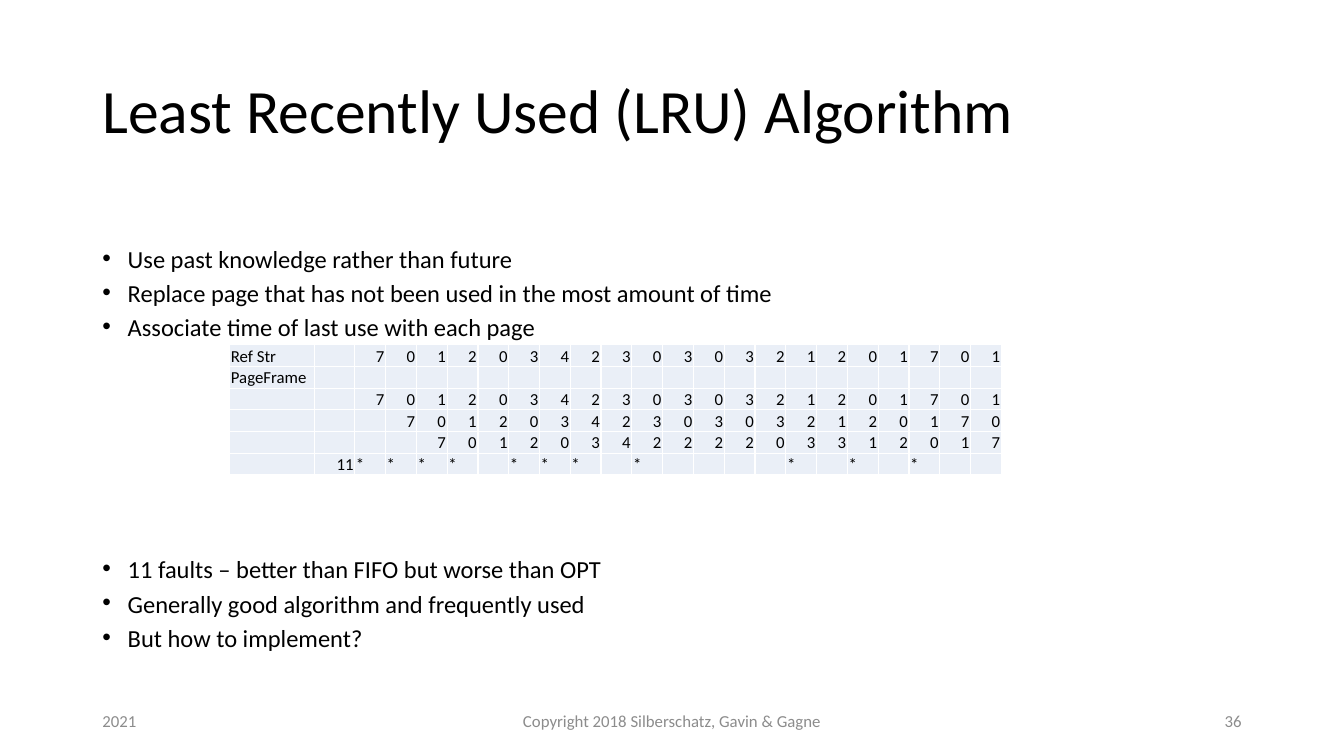
from lxml import etree
from pptx import Presentation
from pptx.dml.color import RGBColor
from pptx.enum.text import MSO_ANCHOR, PP_ALIGN
from pptx.oxml.ns import qn
from pptx.util import Cm, Pt

LEFT, CENTER, RIGHT = PP_ALIGN.LEFT, PP_ALIGN.CENTER, PP_ALIGN.RIGHT
TOP, MIDDLE, BOTTOM = MSO_ANCHOR.TOP, MSO_ANCHOR.MIDDLE, MSO_ANCHOR.BOTTOM

TITLE = "Least Recently Used (LRU) Algorithm"
IDEAS = [
    "Use past knowledge rather than future",
    "Replace page that has not been used in the most amount of time",
    "Associate time of last use with each page",
]
RESULTS = [
    "11 faults – better than FIFO but worse than OPT",
    "Generally good algorithm and frequently used",
    "But how to implement?",
]
FOOTERS = [
    ("2021", 2.33, 7.62, LEFT),
    ("Copyright 2018 Silberschatz, Gavin & Gagne", 11.22, 11.43, CENTER),
    ("36", 23.92, 7.62, RIGHT),
]
REFERENCES = "701203423030321201701"
FRAMES = [REFERENCES, REFERENCES[:-1], "7012034222203312017"]
FAULTS = "****.***.*....*.*.*.."

STEPS = len(REFERENCES)
ROWS = [
    ["Ref Str", "", *REFERENCES],
    ["PageFrame", ""] + [""] * STEPS,
    *[["", "", *frame.rjust(STEPS).replace(" ", ".")] for frame in FRAMES],
    ["", str(FAULTS.count("*")), *FAULTS],
]

FONT = "Calibri"
BLACK, GRAY, WHITE, PALE_BLUE = "000000", "8C8C8C", "FFFFFF", "EAEFF7"
MARGIN, CONTENT_WIDTH = 2.33, 29.21
TABLE_LEFT, TABLE_TOP, TABLE_WIDTH, TABLE_HEIGHT = 5.79, 8.69, 19.46, 3.28
LABEL_WIDTH, COUNT_WIDTH = 2.13, 1.02
STEP_WIDTH = (TABLE_WIDTH - LABEL_WIDTH - COUNT_WIDTH) / STEPS


def color(value):
    return RGBColor.from_string(value)


def add_bullet(para):
    properties = para._p.get_or_add_pPr()
    properties.set("marL", str(Cm(0.64)))
    properties.set("indent", str(-Cm(0.64)))
    font = etree.SubElement(properties, qn("a:buFont"))
    font.set("typeface", "Arial")
    etree.SubElement(properties, qn("a:buChar")).set("char", "•")


def write(frame, lines, size, ink=BLACK, align=LEFT, anchor=TOP,
          line_spacing=1.0, gap=0, bullet=False):
    frame.word_wrap = True
    frame.vertical_anchor = anchor
    for index, line in enumerate(lines):
        para = frame.add_paragraph() if index else frame.paragraphs[0]
        para.alignment = align
        para.line_spacing = line_spacing
        para.space_before = Pt(gap if index else 0)
        if bullet:
            add_bullet(para)
        span = para.add_run()
        span.text = line
        span.font.name = FONT
        span.font.size = Pt(size)
        span.font.color.rgb = color(ink)


def add_text(page, left, top, width, height, lines, size, **style):
    box = page.shapes.add_textbox(Cm(left), Cm(top), Cm(width), Cm(height))
    write(box.text_frame, lines, size, **style)


def add_borders(cell):
    properties = cell._tc.get_or_add_tcPr()
    for index, side in enumerate(("a:lnL", "a:lnR", "a:lnT", "a:lnB")):
        line = etree.Element(qn(side), w=str(Pt(1)))
        fill = etree.SubElement(line, qn("a:solidFill"))
        etree.SubElement(fill, qn("a:srgbClr")).set("val", WHITE)
        properties.insert(index, line)


def fill_cell(cell, text):
    cell.margin_left = cell.margin_right = cell.margin_top = Cm(0.03)
    cell.margin_bottom = 0
    cell.fill.solid()
    cell.fill.fore_color.rgb = color(PALE_BLUE)
    add_borders(cell)
    cell.vertical_anchor = MIDDLE if text == "11" else BOTTOM
    if text in ("", "."):
        ending = etree.SubElement(cell.text_frame.paragraphs[0]._p, qn("a:endParaRPr"))
        ending.set("sz", "1200")
        return
    write(cell.text_frame, [text], 12, align=RIGHT if text.isdigit() else LEFT,
          anchor=cell.vertical_anchor)


def add_page_table(page):
    shape = page.shapes.add_table(len(ROWS), len(ROWS[0]), Cm(TABLE_LEFT), Cm(TABLE_TOP),
                                  Cm(TABLE_WIDTH), Cm(TABLE_HEIGHT))
    table = shape.table
    table.first_row = table.horz_banding = False
    widths = [LABEL_WIDTH, COUNT_WIDTH] + [STEP_WIDTH] * STEPS
    for column, width in zip(table.columns, widths):
        column.width = Cm(width)
    for row_index, row in enumerate(ROWS):
        table.rows[row_index].height = Cm(TABLE_HEIGHT / len(ROWS))
        for column_index, text in enumerate(row):
            fill_cell(table.cell(row_index, column_index), text)


def main():
    deck = Presentation()
    deck.slide_width, deck.slide_height = Cm(33.87), Cm(19.05)
    page = deck.slides.add_slide(deck.slide_layouts[6])
    add_text(page, MARGIN, 1.02, CONTENT_WIDTH, 3.68, [TITLE], 44,
             anchor=MIDDLE, line_spacing=0.9)
    for top, lines in ((6.22, IDEAS), (14.05, RESULTS)):
        add_text(page, MARGIN, top, CONTENT_WIDTH, 2.5, lines, 17.5,
                 line_spacing=0.7, gap=9.7, bullet=True)
    for text, left, width, align in FOOTERS:
        add_text(page, left, 17.65, width, 1.02, [text], 12,
                 ink=GRAY, align=align, anchor=MIDDLE)
    add_page_table(page)
    deck.save("out.pptx")


if __name__ == "__main__":
    main()
